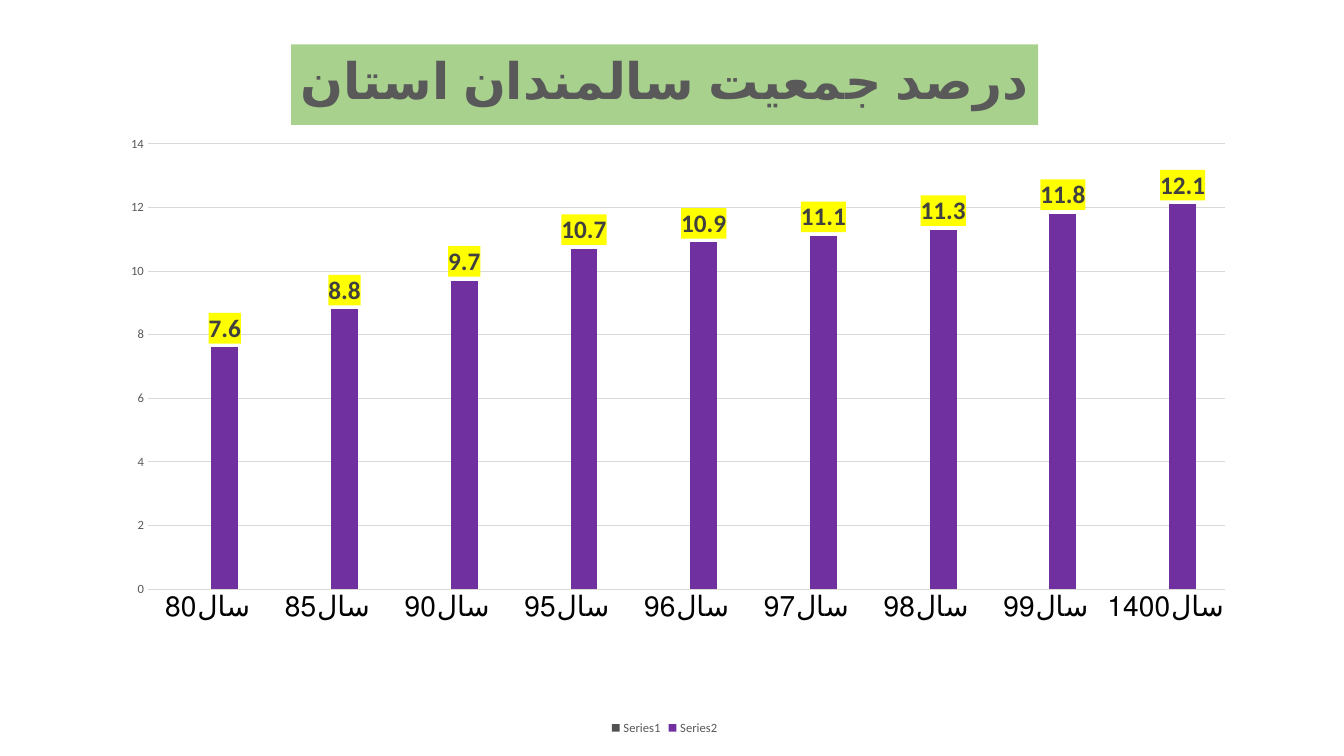
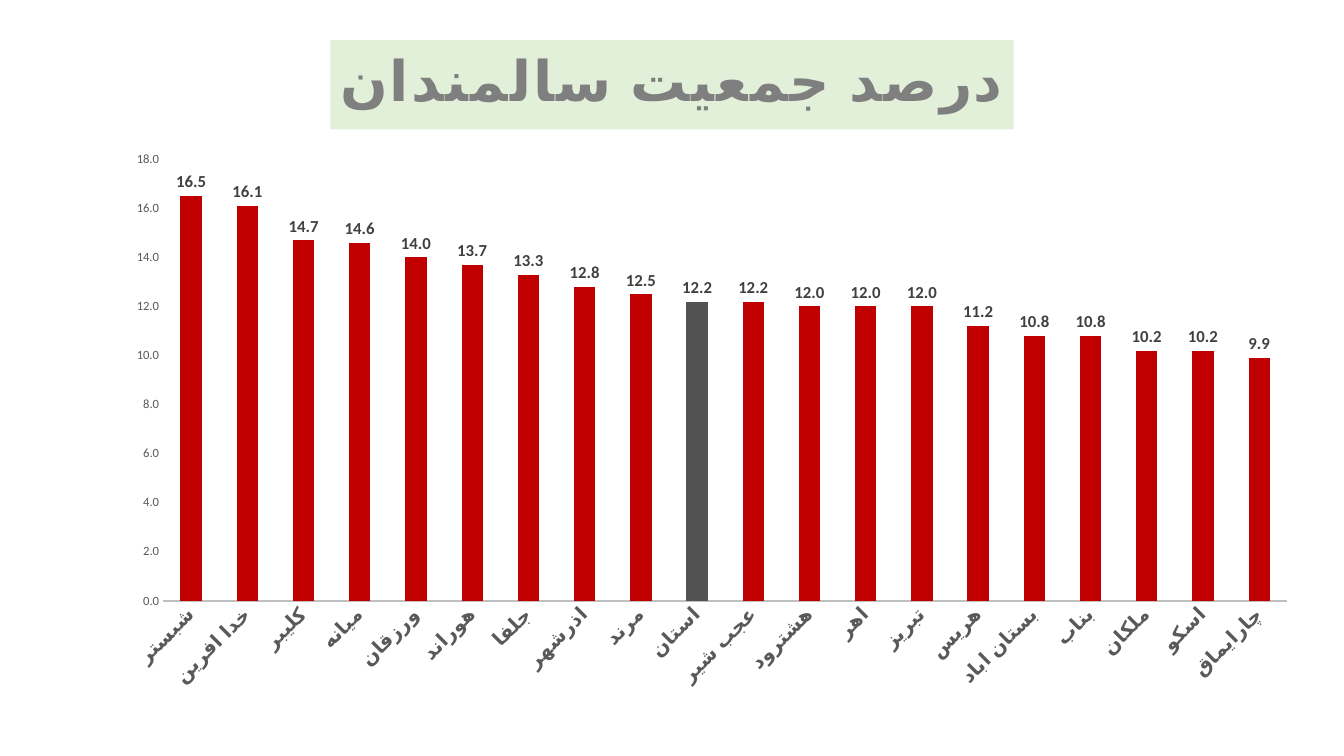
from lxml import etree
from pptx import Presentation
from pptx.chart import data as cd
from pptx.dml.color import RGBColor
from pptx.enum import chart as ec
from pptx.oxml import ns
from pptx.util import Pt

INK = {
    "text": "595959", "label": "404040", "grid": "D9D9D9", "axis": "BFBFBF",
    "black": "000000", "slate": "525252", "purple": "7030A0", "red": "C00000",
    "yellow": "FFFF00", "green": "A9D18E", "pale": "E2F0D9", "grey": "7F7F7F",
}
FACE = "Calibri"
AUTO = -1000  # the angle that marks automatic label rotation, without wrapping

YEARS = ["سال80", "سال85", "سال90", "سال95", "سال96", "سال97", "سال98",
         "سال99", "سال1400"]
SHARES = [7.6, 8.8, 9.7, 10.7, 10.9, 11.1, 11.3, 11.8, 12.1]

TOWNS = {
    "شبستر": 16.5, "خدا افرین": 16.1, "کلیبر": 14.7, "میانه": 14.6,
    "ورزقان": 14, "هوراند": 13.7, "جلفا": 13.3, "اذرشهر": 12.8,
    "مرند": 12.5, "استان": 12.2, "عجب شیر": 12.2, "هشترود": 12,
    "اهر": 12, "تبریز": 12, "هریس": 11.2, "بستان اباد": 10.8,
    "بناب": 10.8, "ملکان": 10.2, "اسکو": 10.2, "چارایماق": 9.9,
}


def rgb(name):
    return RGBColor.from_string(INK[name])


class Deck:
    """Holds the shared chart style and the current slide."""

    def __init__(self):
        self.prs = Presentation()
        self.prs.slide_width, self.prs.slide_height = Pt(960), Pt(540)

    def page(self):
        self.slide = self.prs.slides.add_slide(self.prs.slide_layouts[6])

    def type(self, font, size, color="text", bold=False):
        font.name, font.size, font.bold = FACE, Pt(size), bold
        font.color.rgb = rgb(color)

    def paint(self, item, color):
        item.format.fill.solid()
        item.format.fill.fore_color.rgb = rgb(color)

    def rule(self, item, color, width):
        item.format.line.color.rgb = rgb(color)
        item.format.line.width = Pt(width)

    def bars(self, box, cats, series, gap, lap, fmt="General"):
        """Add a column chart; series maps each name to (values, colour)."""
        data = cd.CategoryChartData(number_format=fmt)
        data.categories = cats
        for name, (vals, _) in series.items():
            data.add_series(name, vals)
        chart = self.slide.shapes.add_chart(
            ec.XL_CHART_TYPE.COLUMN_CLUSTERED, *map(Pt, box), data).chart
        self.type(chart.font, 10, "black")
        chart.has_legend = False
        plot = chart.plots[0]
        plot.vary_by_categories = False
        plot.gap_width, plot.overlap = gap, lap
        for ser, (_, color) in zip(plot.series, series.values()):
            self.paint(ser, color)
        return chart

    def title(self, chart, text, size, color, fill, space=0):
        chart.has_title = True
        head = chart.chart_title
        para = head.text_frame.paragraphs[0]
        para.text = text
        self.type(para.font, size, color, True)
        head.include_in_layout = False
        self.paint(head, fill)
        for prop in head._element.iter(ns.qn("a:defRPr")):
            prop.set("spc", str(space))

    def frame(self, chart, *part):
        """Place the inner plot area, as fractions of the chart."""
        area = chart._chartSpace.find(".//" + ns.qn("c:plotArea"))
        lay = area.find(ns.qn("c:layout"))
        if lay is None:
            lay = etree.Element(ns.qn("c:layout"))
            area.insert(0, lay)
        man = etree.SubElement(lay, ns.qn("c:manualLayout"))
        pairs = [("layoutTarget", "inner"), ("xMode", "edge"),
                 ("yMode", "edge"), *zip("xywh", part)]
        for tag, val in pairs:
            etree.SubElement(man, ns.qn("c:" + tag)).set("val", str(val))

    def axes(self, chart, top, line, size, color="text", bold=False,
             grid=False, turn=AUTO):
        cat, val = chart.category_axis, chart.value_axis
        for axis in (cat, val):
            axis.major_tick_mark = axis.minor_tick_mark = ec.XL_TICK_MARK.NONE
        self.type(cat.tick_labels.font, size, color, bold)
        self.rule(cat, *line)
        body = cat._element.find(".//" + ns.qn("a:bodyPr"))
        body.set("rot", str(turn * 60000))
        self.type(val.tick_labels.font, 9)
        val.format.line.fill.background()
        val.minimum_scale, val.maximum_scale, val.major_unit = 0, top, 2
        val.has_major_gridlines = grid
        if grid:
            self.rule(val.major_gridlines, "grid", 0.75)

    def labels(self, ser, size, fmt="General", fill=None):
        tags = ser.data_labels
        tags.show_value = True
        tags.position = ec.XL_LABEL_POSITION.OUTSIDE_END
        tags.number_format, tags.number_format_is_linked = fmt, False
        self.type(tags.font, size, "label", True)
        if fill:
            prop = etree.Element(ns.qn("c:spPr"))
            solid = etree.SubElement(prop, ns.qn("a:solidFill"))
            etree.SubElement(solid, ns.qn("a:srgbClr")).set("val", INK[fill])
            tags._element.find(ns.qn("c:txPr")).addprevious(prop)

    def legend(self, chart):
        chart.has_legend = True
        chart.legend.position = ec.XL_LEGEND_POSITION.BOTTOM
        chart.legend.include_in_layout = False
        self.type(chart.legend.font, 9)


def trend(deck):
    deck.page()
    chart = deck.bars(
        (48.5, 17.6, 852.5, 510.5), YEARS,
        {"Series1": ([None] * len(YEARS), "slate"),
         "Series2": (SHARES, "purple")}, 219, -27)
    deck.title(chart, "درصد جمعیت سالمندان استان", 36, "text", "green")
    deck.frame(chart, 0.067, 0.167, 0.903, 0.623)
    deck.axes(chart, 14, ("grid", 0.75), 20, "black", grid=True)
    deck.labels(chart.plots[0].series[1], 18, fill="yellow")
    deck.legend(chart)


def towns(deck):
    deck.page()
    names = list(TOWNS)
    chart = deck.bars(
        (17.5, 14.7, 925.2, 510.5), names,
        {"Series 1": (list(TOWNS.values()), "red")}, 164, -22, "0.0")
    deck.title(chart, "درصد جمعیت سالمندان", 40, "grey", "pale", 150)
    deck.frame(chart, 0.107, 0.194, 0.868, 0.618)
    deck.axes(chart, 18, ("axis", 1.5), 14, bold=True, turn=-45)
    ser = chart.plots[0].series[0]
    deck.labels(ser, 12, "0.0")
    deck.paint(ser.points[names.index("استان")], "slate")


def main():
    deck = Deck()
    trend(deck)
    towns(deck)
    deck.prs.save("out.pptx")


if __name__ == "__main__":
    main()
